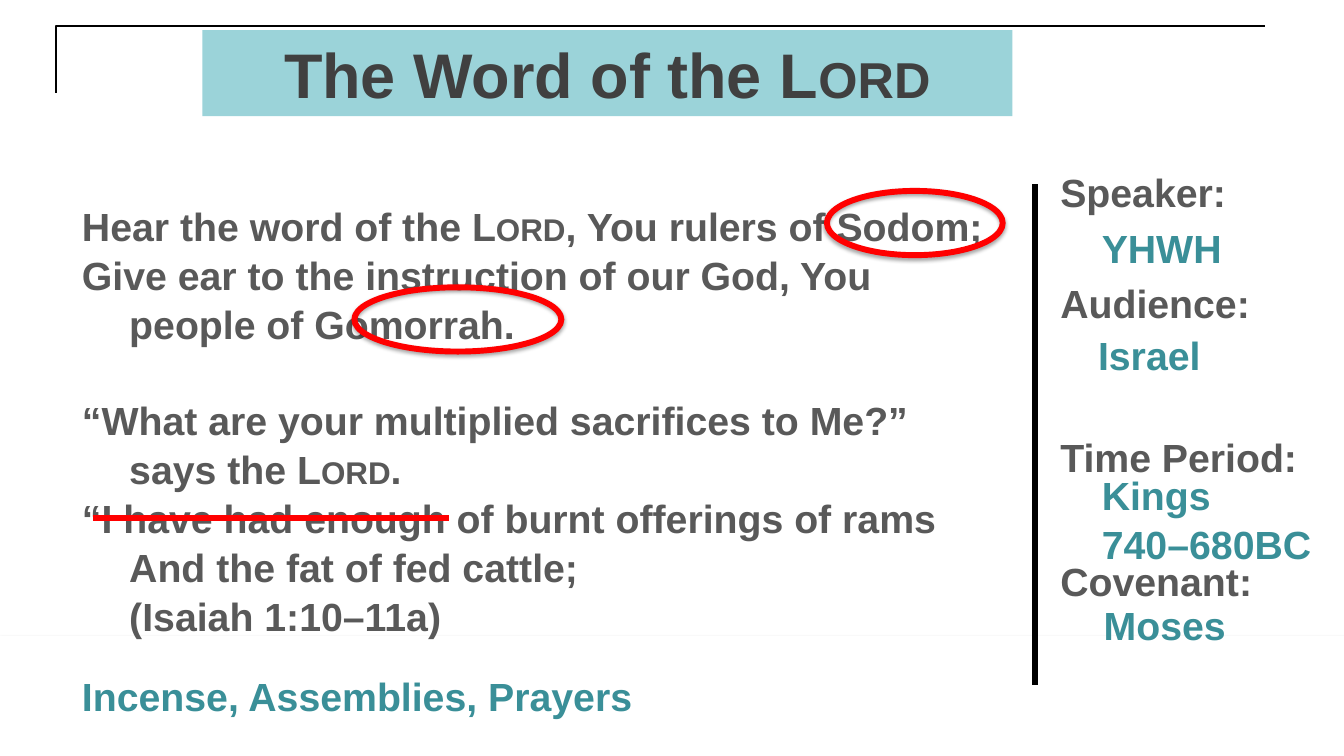
"""Build the slide on the word of the Lord with its passage and side notes."""
import pptx
import pptx.dml.color
import pptx.enum.shapes
import pptx.enum.text
import pptx.oxml
import pptx.oxml.ns
import pptx.util
from lxml import etree

RGB = pptx.dml.color.RGBColor
BLACK = RGB(0x00, 0x00, 0x00)
WHITE = RGB(0xFF, 0xFF, 0xFF)
RED = RGB(0xFF, 0x00, 0x00)
DARK = RGB(0x40, 0x40, 0x40)
GRAY = RGB(0x59, 0x59, 0x59)
TEAL = RGB(0x3A, 0x8F, 0x98)
AQUA = RGB(0x9B, 0xD3, 0xD9)

WIDTH, HEIGHT = 14.22, 8
SIZE = 29.9
LEADING = 1.04
LABEL_LEFT = 78.2

LABELS = [("Speaker:", 21.38), ("Audience:", 36.13),
          ("Time Period:", 56.5), ("Covenant:", 72.88)]
ANSWERS = [(["YHWH"], 81.29, 28.75), (["Israel"], 81.01, 43),
           (["Kings", "740–680BC"], 81.29, 61.5), (["Moses"], 81.43, 78.63)]
PASSAGE = [
    ("Hear the word of the |Lord|, You rulers of Sodom;", GRAY, 0),
    ("Give ear to the instruction of our God, You \n\tpeople of Gomorrah.", GRAY, 0),
    ("“What are your multiplied sacrifices to Me?” \n\tsays the |Lord|.", GRAY, 36),
    ("“I have had enough of burnt offerings of rams \n\tAnd the fat of fed cattle;", GRAY, 0),
    ("\t(Isaiah 1:10–11a)", GRAY, 0),
    ("Incense, Assemblies, Prayers", TEAL, 24),
]


def across(share):
    """Return a length as a percentage of the slide's width."""
    return pptx.util.Inches(WIDTH * share / 100)


def down(share):
    """Return a length as a percentage of the slide's height."""
    return pptx.util.Inches(HEIGHT * share / 100)


def area(left, top, width, height):
    """Return a rectangle given in percentages of the slide."""
    return across(left), down(top), across(width), down(height)


def write(p, text, size, color):
    """Fill a paragraph, with the parts between bars in small capitals."""
    for i, part in enumerate(text.split("|")):
        for j, line in enumerate(part.split("\n")):
            if j:
                p.add_line_break()
            r = p.add_run()
            r.text = line
            r.font.name = "Arial"
            r.font.size = pptx.util.Pt(size)
            r.font.bold = True
            r.font.color.rgb = color
            if i % 2:
                r.font._element.set("cap", "small")


def add_text(s, box, paragraphs):
    """Add a text box of (text, color, space before) paragraphs."""
    tf = s.shapes.add_textbox(*area(*box)).text_frame
    tf.word_wrap = True
    for i, (text, color, space) in enumerate(paragraphs):
        p = tf.add_paragraph() if i else tf.paragraphs[0]
        p.line_spacing = LEADING
        if space:
            p.space_before = pptx.util.Pt(space)
        write(p, text, SIZE, color)


def add_shadowed(s, kind, box):
    """Add a preset shape with a soft shadow below it."""
    sp = s.shapes.add_shape(kind, *area(*box))
    sp.shadow.inherit = False
    qn = pptx.oxml.ns.qn
    effects = sp._element.spPr.find(qn("a:effectLst"))
    shadow = etree.SubElement(effects, qn("a:outerShdw"), dir="5400000", rotWithShape="0",
                              blurRad=str(pptx.util.Pt(3.1)), dist=str(pptx.util.Pt(1.8)))
    color = etree.SubElement(shadow, qn("a:srgbClr"), val=str(BLACK))
    etree.SubElement(color, qn("a:alpha"), val="35000")
    return sp


def add_band(s):
    """Add the white band along the foot of the slide."""
    sp = add_shadowed(s, pptx.enum.shapes.MSO_SHAPE.RECTANGLE, (0, 84.13, 100, 15.87))
    sp.fill.solid()
    sp.fill.fore_color.rgb = WHITE
    sp.line.fill.background()


def add_ring(s, box):
    """Add a red ring around a word."""
    sp = add_shadowed(s, pptx.enum.shapes.MSO_SHAPE.OVAL, box)
    sp.fill.background()
    sp.line.color.rgb = RED
    sp.line.width = pptx.util.Pt(4.5)


def add_line(s, x1, y1, x2, y2, color):
    """Add a thick straight line."""
    line = s.shapes.add_connector(pptx.enum.shapes.MSO_CONNECTOR.STRAIGHT,
                                  across(x1), down(y1), across(x2), down(y2))
    line.line.color.rgb = color
    line.line.width = pptx.util.Pt(4.5)
    etree.SubElement(line._element.spPr, pptx.oxml.ns.qn("a:effectLst"))


def add_frame(s):
    """Add the thin corner frame at the top left."""
    builder = s.shapes.build_freeform(across(4.15), down(12.25))
    builder.add_line_segments([(across(4.15), down(3.38)), (across(94.16), down(3.38))],
                              close=False)
    sp = builder.convert_to_shape()
    sp.shadow.inherit = False
    sp.fill.background()
    sp.line.color.rgb = BLACK
    sp.line.width = pptx.util.Pt(1.5)


def set_title(s):
    """Place and format the title placeholder."""
    sp = s.shapes.title
    sp.left, sp.top, sp.width, sp.height = area(15.05, 4, 60.27, 11.38)
    sp.fill.solid()
    sp.fill.fore_color.rgb = AQUA
    tf = sp.text_frame
    tf.word_wrap = True
    tf.vertical_anchor = pptx.enum.text.MSO_ANCHOR.MIDDLE
    p = tf.paragraphs[0]
    p.alignment = pptx.enum.text.PP_ALIGN.CENTER
    write(p, "The Word of the L|ord", 48, DARK)


def main():
    """Build and save the slide."""
    prs = pptx.Presentation()
    prs.slide_width, prs.slide_height = across(100), down(100)
    s = prs.slides.add_slide(prs.slide_layouts[5])
    add_frame(s)
    set_title(s)
    add_band(s)
    for text, top in LABELS:
        add_text(s, (LABEL_LEFT, top, 19.5, 7.5), [(text, GRAY, 0)])
    add_line(s, 77, 24.38, 77, 90.63, BLACK)
    add_text(s, (5.41, 25.88, 69.83, 67.88), PASSAGE)
    for lines, left, top in ANSWERS:
        add_text(s, (left, top, 17.2, 1.25 + 6.25 * len(lines)),
                 [(line, TEAL, 0) for line in lines])
    add_ring(s, (61.53, 25.25, 13.08, 8.5))
    add_ring(s, (26.37, 38, 15.4, 8.5))
    add_line(s, 6.89, 68.5, 33.4, 68.5, RED)
    prs.save("out.pptx")


if __name__ == "__main__":
    main()
